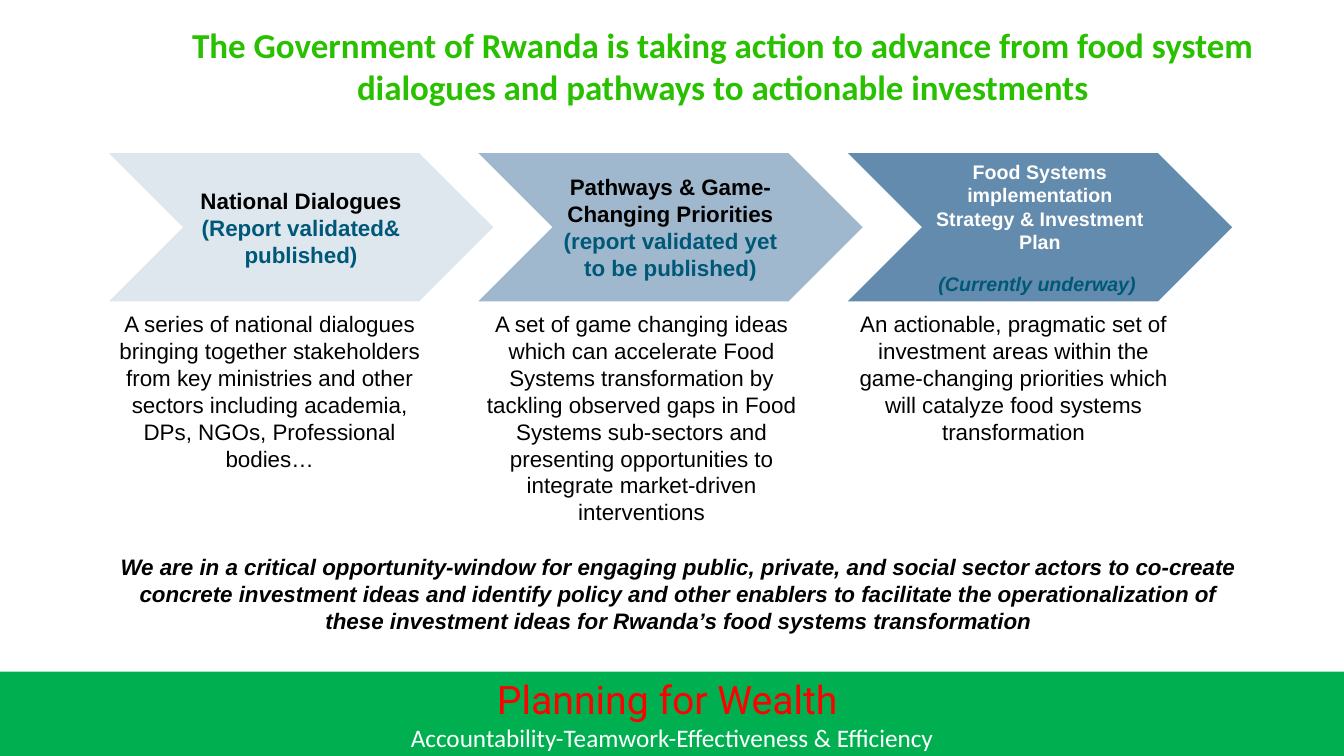
from pptx import Presentation
from pptx.dml.color import RGBColor
from pptx.enum import shapes, text
from pptx.util import Pt

GREEN = RGBColor(0x00, 0xB0, 0x50)
TITLE_GREEN = RGBColor(0x29, 0xC0, 0x00)
RED = RGBColor(0xFF, 0x00, 0x00)
WHITE = RGBColor(0xFF, 0xFF, 0xFF)
BLACK = RGBColor(0x00, 0x00, 0x00)
TEAL = RGBColor(0x00, 0x58, 0x78)
PALE_BLUE = RGBColor(0xDE, 0xE6, 0xEE)
LIGHT_BLUE = RGBColor(0xA0, 0xB8, 0xCD)
MID_BLUE = RGBColor(0x63, 0x8B, 0xAD)

prs = Presentation()
prs.slide_width, prs.slide_height = Pt(960), Pt(540)
slide = prs.slides.add_slide(prs.slide_layouts[6])


def add_text(sp, words, size=16, font="Arial", color=BLACK, bold=False,
             italic=False, before=0, anchor=text.MSO_ANCHOR.MIDDLE):
    """Fill the first paragraph of a shape, or append another one."""
    tf = sp.text_frame
    tf.word_wrap = True
    tf.vertical_anchor = anchor
    p = tf.add_paragraph() if tf.text else tf.paragraphs[0]
    p.alignment = text.PP_ALIGN.CENTER
    p.space_before = Pt(before)
    r = p.add_run()
    r.text = words
    r.font.size, r.font.name = Pt(size), font
    r.font.bold, r.font.italic = bold, italic
    r.font.color.rgb = color


def add_block(kind, left, top, width, height, fill=None):
    sp = slide.shapes.add_shape(kind, Pt(left), Pt(top), Pt(width), Pt(height))
    sp.shadow.inherit = False
    sp.line.fill.background()
    if fill is None:
        sp.fill.background()
    else:
        sp.fill.solid()
        sp.fill.fore_color.rgb = fill
    return sp


# Footer band
sp = add_block(shapes.MSO_SHAPE.RECTANGLE, 0, 479.8, 960, 60.2, GREEN)
add_text(sp, "Planning for Wealth ", size=28, font="Roboto", color=RED)
add_text(sp, "Accountability-Teamwork-Effectiveness & Efficiency",
         size=18, font="Calibri", color=WHITE)

# Title
sp = slide.shapes.add_textbox(Pt(113), Pt(13), Pt(806.4), Pt(57))
add_text(sp, "The Government of Rwanda is taking action to advance from food "
         "system dialogues and pathways to actionable investments", size=25,
         font="Calibri", color=TITLE_GREEN, bold=True, anchor=text.MSO_ANCHOR.TOP)

# Three stages: chevron with heading and status, description below
stages = [
    (PALE_BLUE, BLACK, 16, "National Dialogues",
     "(Report validated& published)",
     "A series of national dialogues bringing together stakeholders from key "
     "ministries and other sectors including academia, DPs, NGOs, "
     "Professional bodies…"),
    (LIGHT_BLUE, BLACK, 16, "Pathways & Game-Changing Priorities",
     "(report validated yet to be published)",
     "A set of game changing ideas which can accelerate Food Systems "
     "transformation by tackling observed gaps in Food Systems sub-sectors and "
     "presenting opportunities to integrate market-driven interventions"),
    (MID_BLUE, WHITE, 14,
     "Food Systems implementation Strategy & Investment Plan",
     "(Currently underway) ",
     "An actionable, pragmatic set of investment areas within the "
     "game-changing priorities which will catalyze food systems transformation"),
]
for i, (fill, color, size, heading, status, description) in enumerate(stages):
    underway = i == len(stages) - 1
    sp = add_block(shapes.MSO_SHAPE.CHEVRON, 77.8 + 263.9 * i, 109.3, 274.5, 106, fill)
    add_text(sp, heading, size=size, color=color, bold=True)
    add_text(sp, status, size=size, color=TEAL, bold=True, italic=underway,
             before=12.7 if underway else 0)

    sp = slide.shapes.add_textbox(Pt(70.6 + 265.7 * i), Pt(218.2), Pt(244), Pt(131.8))
    add_text(sp, description, anchor=text.MSO_ANCHOR.TOP)

# Closing message
sp = add_block(shapes.MSO_SHAPE.FLOWCHART_ALTERNATE_PROCESS, 70.6, 383.8, 828, 80.6)
add_text(sp, "We are in a critical opportunity-window for engaging public, private, "
         "and social sector actors to co-create concrete investment ideas and "
         "identify policy and other enablers to facilitate the operationalization "
         "of these investment ideas for Rwanda’s food systems transformation",
         bold=True, italic=True)

prs.save("out.pptx")
